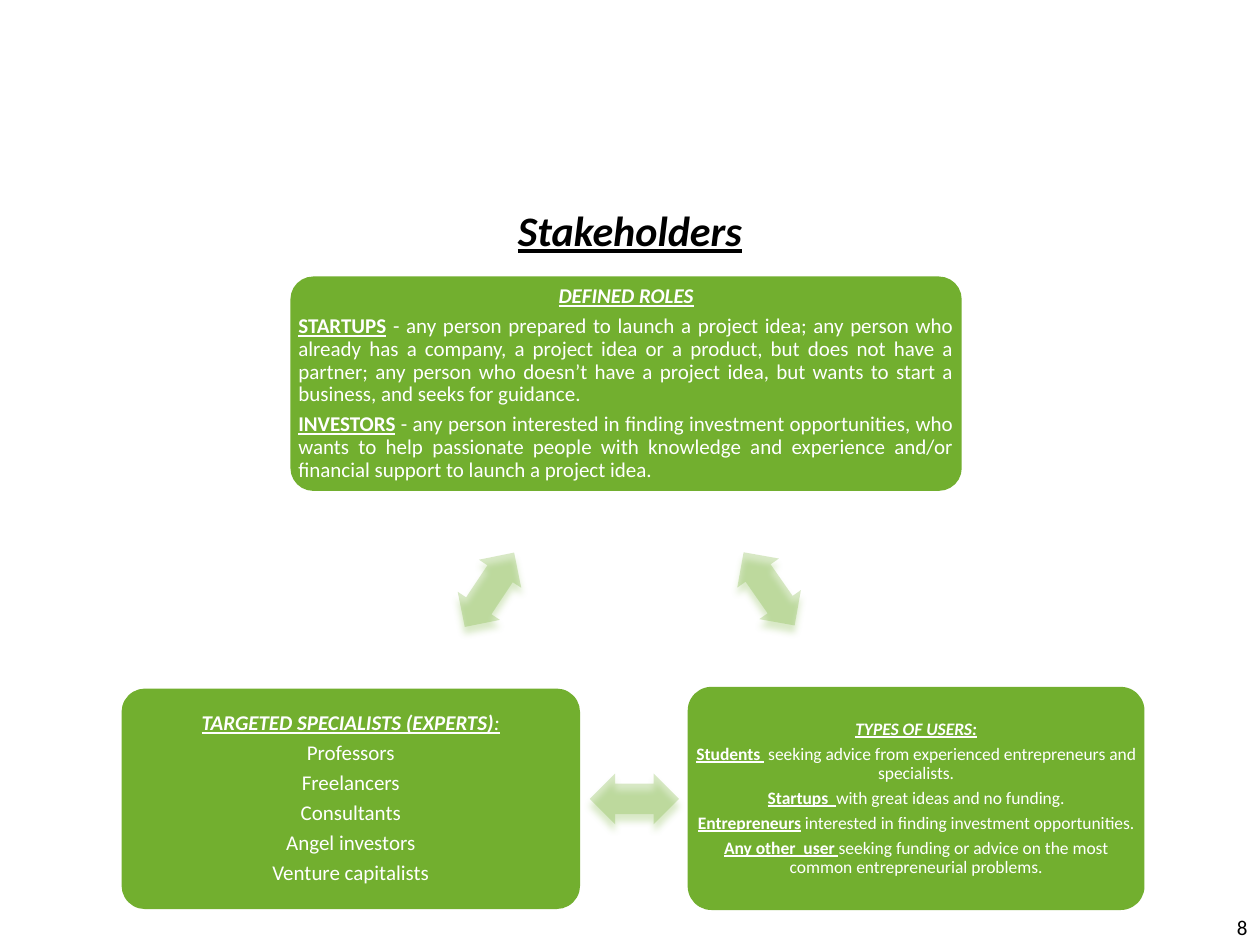
from lxml import etree
from pptx import Presentation
from pptx.dml.color import RGBColor
from pptx.enum.shapes import MSO_SHAPE as Shape
from pptx.enum.text import MSO_ANCHOR as Anchor, PP_ALIGN as Align
from pptx.oxml.ns import qn
from pptx.util import Pt

COLORS = {"green": "72AF2F", "white": "FFFFFF", "black": "000000"}


def add_text(para, text, size=12, color="white", bold=False, italic=False, underline=False):
    span = para.add_run()
    span.text = text
    font = span.font
    font.name = "Calibri"
    font.size = Pt(size)
    font.bold = bold
    font.italic = italic
    font.underline = underline
    font.color.rgb = RGBColor.from_string(COLORS[color])


HEADING = {"bold": True, "italic": True, "underline": True}
HEADING_END = {"italic": True, "underline": True}
TERM = {"bold": True, "underline": True}
PLAIN = {}

deck = Presentation()
deck.slide_width, deck.slide_height = Pt(720), Pt(540)
page = deck.slides.add_slide(deck.slide_layouts[5])
green = RGBColor.from_string(COLORS["green"])

title = page.shapes.title
title.left, title.top, title.width, title.height = Pt(36), Pt(111.6), Pt(648), Pt(39.6)
title.text_frame.vertical_anchor = Anchor.MIDDLE
title_para = title.text_frame.paragraphs[0]
title_para.alignment = Align.CENTER
add_text(title_para, "Stakeholders", size=24, color="black", **HEADING)

cards = [
    ((167, 159, 381.6, 120.5), 12, Align.JUSTIFY, [
        [("DEFINED ROLES", HEADING)],
        [("STARTUPS", TERM),
         (" - any person prepared to launch a project idea; any person who already has a company, "
          "a project idea or a product, but does not have a partner; any person who doesn’t have "
          "a project idea, but wants to start a business, and seeks for guidance.", PLAIN)],
        [("INVESTORS", TERM),
         (" - any person interested in finding investment opportunities, who wants to help "
          "passionate people with knowledge and experience and/or financial support to launch "
          "a project idea.", PLAIN)],
    ]),
    ((394, 393.5, 259, 125.5), 10, Align.CENTER, [
        [("TYPES OF USERS:", HEADING)],
        [("Students ", TERM),
         (" seeking advice from experienced entrepreneurs and specialists.", PLAIN)],
        [("Startups  ", TERM), ("with great ideas and no funding.", PLAIN)],
        [("Entrepreneurs", TERM), (" interested in finding investment opportunities.", PLAIN)],
        [("Any other  user ", TERM),
         ("seeking funding or advice on the most common entrepreneurial problems.", PLAIN)],
    ]),
    ((70.5, 394.5, 260, 124), 12, Align.CENTER, [
        [("TARGETED SPECIALISTS (EXPERTS)", HEADING), (":", HEADING_END)],
        [("Professors", PLAIN)],
        [("Freelancers", PLAIN)],
        [("Consultants", PLAIN)],
        [("Angel investors", PLAIN)],
        [("Venture capitalists", PLAIN)],
    ]),
]

for place, size, alignment, paragraphs in cards:
    card = page.shapes.add_shape(Shape.ROUNDED_RECTANGLE, *map(Pt, place))
    card.adjustments[0] = 0.1
    card.shadow.inherit = False
    card.fill.solid()
    card.fill.fore_color.rgb = green
    card.line.color.rgb = green
    card.line.width = Pt(2)
    frame = card.text_frame
    frame.word_wrap = True
    frame.vertical_anchor = Anchor.MIDDLE
    frame.margin_left = frame.margin_right = frame.margin_top = frame.margin_bottom = 0
    for index, spans in enumerate(paragraphs):
        para = frame.add_paragraph() if index else frame.paragraphs[0]
        para.alignment = alignment if index else Align.CENTER
        para.line_spacing = 0.9
        para.space_after = Pt(0.35 * size)
        for text, style in spans:
            add_text(para, text, size=size, **style)

for left, top, rotation in [(414, 322, 55.1), (337, 442, 180), (254.2, 322.5, 303.6)]:
    arrow = page.shapes.add_shape(Shape.LEFT_RIGHT_ARROW, Pt(left), Pt(top), Pt(51), Pt(29))
    arrow.rotation = rotation
    arrow.adjustments[0], arrow.adjustments[1] = 0.6, 0.5
    arrow.fill.solid()
    arrow.fill.fore_color.rgb = green
    arrow.line.fill.background()
    arrow.shadow.inherit = False
    properties = arrow.element.spPr
    fill_color = properties.find(qn("a:solidFill")).find(qn("a:srgbClr"))
    etree.SubElement(fill_color, qn("a:alpha"), val="27000")
    shadow = etree.SubElement(
        properties.find(qn("a:effectLst")), qn("a:outerShdw"),
        blurRad=str(Pt(4)), dist=str(Pt(4)), dir="5400000", rotWithShape="0")
    etree.SubElement(shadow, qn("a:srgbClr"), val=COLORS["green"])

number = page.shapes.add_textbox(Pt(552), Pt(519), Pt(168), Pt(21))
number.text_frame.word_wrap = True
number.text_frame.vertical_anchor = Anchor.MIDDLE
number_para = number.text_frame.paragraphs[0]
number_para.alignment = Align.RIGHT
add_text(number_para, "8", color="black")

deck.save("out.pptx")
